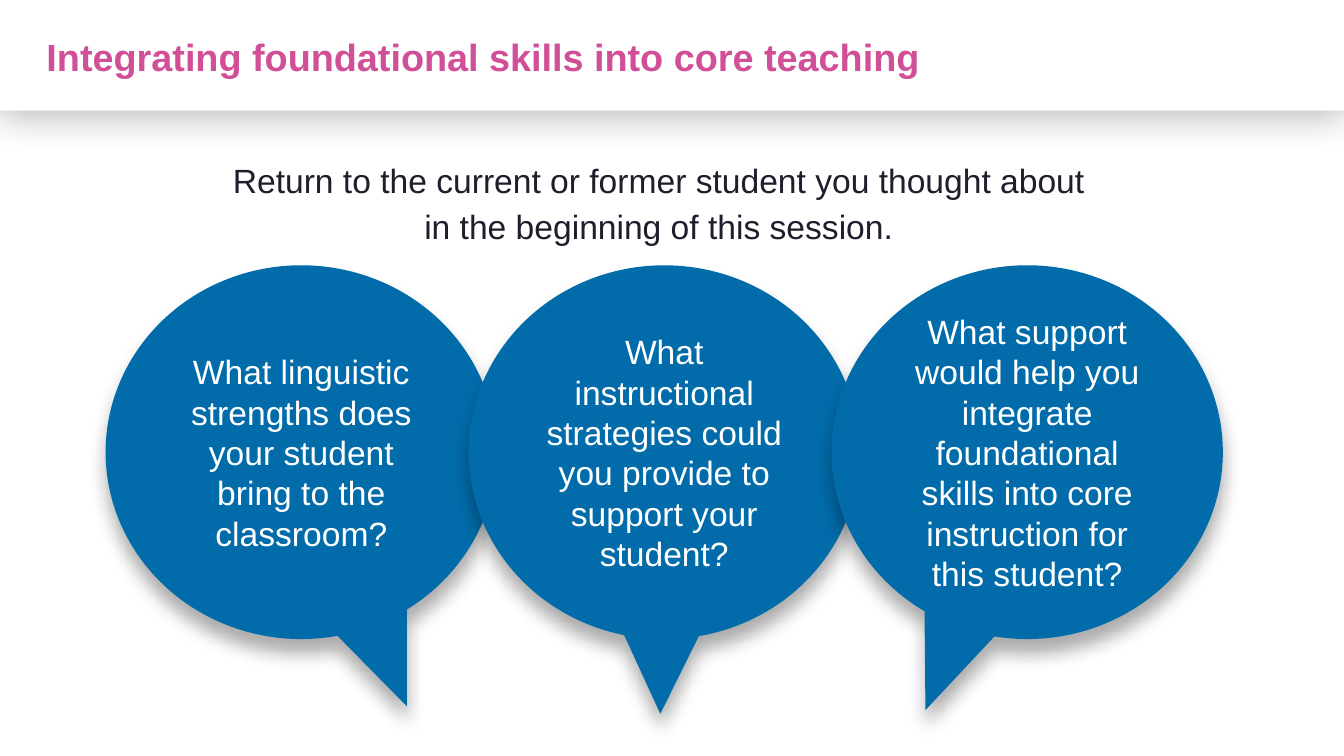
from lxml import etree
from pptx import Presentation
from pptx.dml.color import RGBColor
from pptx.enum.shapes import MSO_SHAPE
from pptx.enum.text import MSO_ANCHOR, MSO_AUTO_SIZE, PP_ALIGN
from pptx.oxml.ns import qn
from pptx.util import Pt

RECTANGLE = MSO_SHAPE.RECTANGLE
CALLOUT = MSO_SHAPE.OVAL_CALLOUT
MIDDLE, TOP = MSO_ANCHOR.MIDDLE, MSO_ANCHOR.TOP
LEFT, CENTER = PP_ALIGN.LEFT, PP_ALIGN.CENTER
NO_AUTOFIT = MSO_AUTO_SIZE.NONE

FONT = "Arial"
COLORS = {
    "white": "FFFFFF",
    "pink": "D14F97",
    "ink": "1E1E2D",
    "blue": "026CAA",
    "shadow": "000000",
}
SLIDE_WIDTH, SLIDE_HEIGHT = 960, 540
QUESTIONS = [
    ("What linguistic strengths does your student bring to the classroom?", (0.27, 0.68)),
    ("What instructional strategies could you provide to support your student?", (-0.01, 0.7)),
    ("What support would help you integrate foundational skills into core "
     "instruction for this student?", (-0.26, 0.69)),
]


def place(shape, box):
    """Move a shape to a box of left, top, width and height in points."""
    shape.left, shape.top, shape.width, shape.height = (Pt(length) for length in box)


def write(shape, text, size, color, align, anchor, bold=False):
    """Fill a shape with one formatted paragraph and return that paragraph."""
    frame = shape.text_frame
    frame.word_wrap = True
    frame.auto_size = NO_AUTOFIT
    frame.vertical_anchor = anchor
    frame.text = text
    paragraph = frame.paragraphs[0]
    paragraph.alignment = align
    font = paragraph.font
    font.name, font.size, font.bold = FONT, Pt(size), bold
    font.color.rgb = RGBColor.from_string(COLORS[color])
    return paragraph


def add_shadowed(slide, kind, box, color, opacity, blur, distance):
    """Add a borderless filled shape with a shadow falling straight down."""
    shape = slide.shapes.add_shape(kind, *(Pt(length) for length in box))
    shape.fill.solid()
    shape.fill.fore_color.rgb = RGBColor.from_string(COLORS[color])
    shape.line.fill.background()
    shape.shadow.inherit = False
    effects = shape.element.spPr.find(qn("a:effectLst"))
    shadow = etree.SubElement(
        effects, qn("a:outerShdw"), blurRad=str(Pt(blur)), dist=str(Pt(distance)),
        dir="5400000", algn="t", rotWithShape="0")
    tint = etree.SubElement(shadow, qn("a:srgbClr"), val=COLORS["shadow"])
    etree.SubElement(tint, qn("a:alpha"), val=str(opacity * 1000))
    return shape


def build_header(slide, box):
    """Place the white header band with the title on it."""
    left, top, width, height = box
    title = slide.shapes.title
    band = add_shadowed(slide, RECTANGLE, box, "white", 30, 28, 3)
    title.element.addprevious(band.element)
    place(title, (left + 26, top + 19.5, width - 65, height - 38))
    write(title, "Integrating foundational skills into core teaching",
          27, "pink", LEFT, MIDDLE, bold=True)


def build_prompt(slide, box):
    """Place the centred prompt in the body placeholder."""
    prompt = slide.placeholders[1]
    place(prompt, box)
    paragraph = write(prompt, "Return to the current or former student you thought about\v"
                      "in the beginning of this session.", 24, "ink", CENTER, TOP)
    paragraph.line_spacing = 1.14
    paragraph.space_before = Pt(0)
    properties = paragraph._p.get_or_add_pPr()
    properties.set("marL", "0")
    properties.set("indent", "0")
    bullet = etree.Element(qn("a:buNone"))
    properties.find(qn("a:defRPr")).addprevious(bullet)


def build_questions(slide, box):
    """Spread overlapping speech bubbles evenly across the box."""
    left, top, width, height = box
    bubble_width = 279.5
    step = (width - bubble_width) / (len(QUESTIONS) - 1)
    for index, (question, tail) in enumerate(QUESTIONS):
        bubble = add_shadowed(slide, CALLOUT, (left + index * step, top, bubble_width, height),
                              "blue", 32, 13, 10)
        bubble.adjustments[0], bubble.adjustments[1] = tail
        write(bubble, question, 24, "white", CENTER, MIDDLE)


def main():
    """Build the slide and save it."""
    deck = Presentation()
    deck.slide_width, deck.slide_height = Pt(SLIDE_WIDTH), Pt(SLIDE_HEIGHT)
    slide = deck.slides.add_slide(deck.slide_layouts[1])
    build_header(slide, (0, 0, SLIDE_WIDTH, 79))
    build_prompt(slide, (22, 106.5, 897, 168))
    build_questions(slide, (75.5, 189.5, 798, 267))
    deck.save("out.pptx")


if __name__ == "__main__":
    main()
